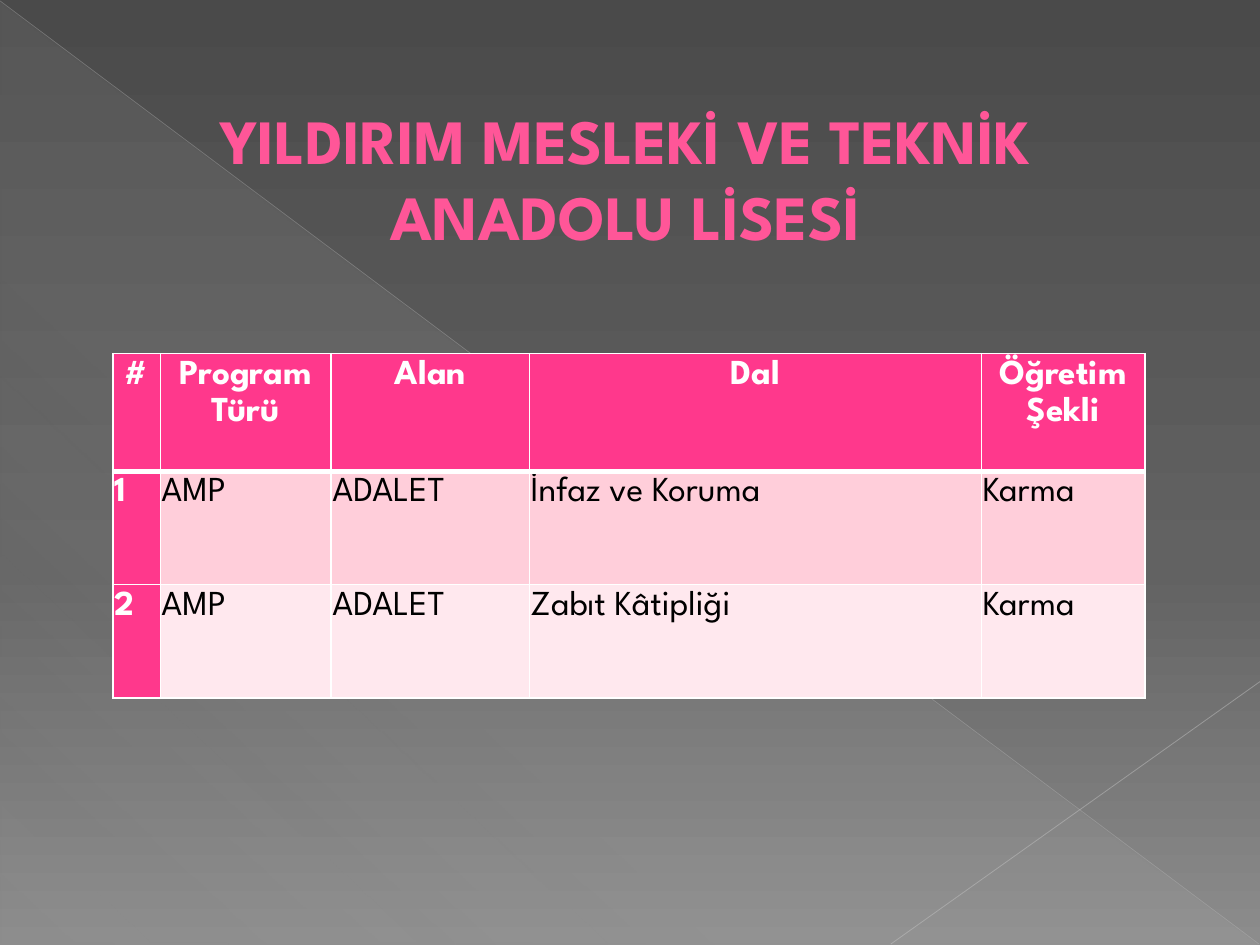
from dataclasses import dataclass

from lxml.etree import SubElement
from pptx import Presentation
from pptx.dml.color import RGBColor
from pptx.enum.shapes import MSO_CONNECTOR, MSO_SHAPE
from pptx.enum.text import MSO_ANCHOR, PP_ALIGN
from pptx.oxml.ns import qn
from pptx.util import Pt


@dataclass(frozen=True)
class Theme:
    font: str = "League Spartan"
    title_size: int = 36
    table_size: int = 20
    title: str = "FF5698"
    accent: str = "FF388C"
    bands: tuple = ("FFCEDA", "FFE8EE")
    white: str = "FFFFFF"
    black: str = "000000"
    # Gradient stops: position %, colour, opacity %
    background: tuple = ((0, "4A4A4A", 100), (60, "626262", 100), (100, "8C8C8C", 100))
    sheen: tuple = ((0, "D2D2D2", 10), (70, "D2D2D2", 8), (100, "D2D2D2", 1))


theme = Theme()


def set_gradient(fill, stops, angle):
    fill.gradient()
    gradient = fill._fill._gradFill
    stop_list = gradient.find(qn("a:gsLst"))
    for stop in list(stop_list):
        stop_list.remove(stop)
    for position, color, opacity in stops:
        stop = SubElement(stop_list, qn("a:gs"), pos=str(position * 1000))
        rgb = SubElement(stop, qn("a:srgbClr"), val=color)
        SubElement(rgb, qn("a:alpha"), val=str(opacity * 1000))
    gradient.find(qn("a:lin")).set("ang", str(angle * 60000))


def style_text(para, size, color, bold, align):
    para.alignment = align
    para.font.name = theme.font
    para.font.size = Pt(size)
    para.font.bold = bold
    para.font.color.rgb = RGBColor.from_string(color)


deck = Presentation()
deck.slide_width, deck.slide_height = Pt(720), Pt(540)
page = deck.slides.add_slide(deck.slide_layouts[6])

# Background with a faint triangle
set_gradient(page.background.fill, theme.background, 90)
triangle = page.shapes.add_shape(
    MSO_SHAPE.RIGHT_TRIANGLE, Pt(0.5), Pt(1.2), Pt(718.9), Pt(538.5))
triangle.shadow.inherit = False
triangle.line.fill.background()
set_gradient(triangle.fill, theme.sheen, 133)

# Diagonal lines: start, end, colour, width, opacity %
diagonals = [
    ((0, 0.5), (719.5, 539.5), "BFBFBF", 0.39, 35),
    ((720, 389.5), (509, 539.5), "C6C6C6", 0.47, 45),
]
for start, end, color, width, opacity in diagonals:
    diagonal = page.shapes.add_connector(
        MSO_CONNECTOR.STRAIGHT, *(Pt(value) for value in start + end))
    diagonal.line.width = Pt(width)
    diagonal.line.color.rgb = RGBColor.from_string(color)
    properties = diagonal._element.spPr
    SubElement(next(properties.iter(qn("a:srgbClr"))), qn("a:alpha"), val=str(opacity * 1000))
    SubElement(properties, qn("a:effectLst"))

# Table of programmes
rows = [
    ("#", "Program Türü", "Alan", "Dal", "Öğretim Şekli"),
    ("1", "AMP", "ADALET", "İnfaz ve Koruma", "Karma"),
    ("2", "AMP", "ADALET", "Zabıt Kâtipliği", "Karma"),
]
column_widths = [27.1, 97.7, 113.3, 258.3, 93.4]
row_heights = [67.3, 64.8, 64.8]
table = page.shapes.add_table(
    len(rows), len(column_widths), Pt(64.5), Pt(202),
    Pt(sum(column_widths)), Pt(sum(row_heights))).table
table.horz_banding = False
for column, width in zip(table.columns, column_widths):
    column.width = Pt(width)

for row_index, (row, height) in enumerate(zip(rows, row_heights)):
    table.rows[row_index].height = Pt(height)
    for column_index, text in enumerate(row):
        cell = table.cell(row_index, column_index)
        cell.margin_left = cell.margin_right = Pt(0.7)
        cell.margin_top = cell.margin_bottom = Pt(0.7)
        is_header = row_index == 0
        is_accent = is_header or column_index == 0

        # A thick rule separates the header from the body
        for side in "LRTB":
            is_thick = (row_index, side) in ((0, "B"), (1, "T"))
            border = SubElement(cell._tc.get_or_add_tcPr(), qn(f"a:ln{side}"),
                                w=str(Pt(3 if is_thick else 1)))
            SubElement(SubElement(border, qn("a:solidFill")), qn("a:srgbClr"), val=theme.white)

        cell.fill.solid()
        cell.fill.fore_color.rgb = RGBColor.from_string(
            theme.accent if is_accent else theme.bands[row_index - 1])
        para = cell.text_frame.paragraphs[0]
        para.text = text
        para.line_spacing = 1.15
        style_text(para, theme.table_size, theme.white if is_accent else theme.black,
                   is_accent, PP_ALIGN.CENTER if is_header else PP_ALIGN.LEFT)

# Title
title_box = page.shapes.add_textbox(Pt(65.5), Pt(54.7), Pt(584), Pt(138.2))
title_box.text_frame.word_wrap = True
title_box.text_frame.vertical_anchor = MSO_ANCHOR.TOP
title = title_box.text_frame.paragraphs[0]
title.text = "YILDIRIM MESLEKİ VE TEKNİK ANADOLU LİSESİ"
style_text(title, theme.title_size, theme.title, True, PP_ALIGN.CENTER)

deck.save("out.pptx")
